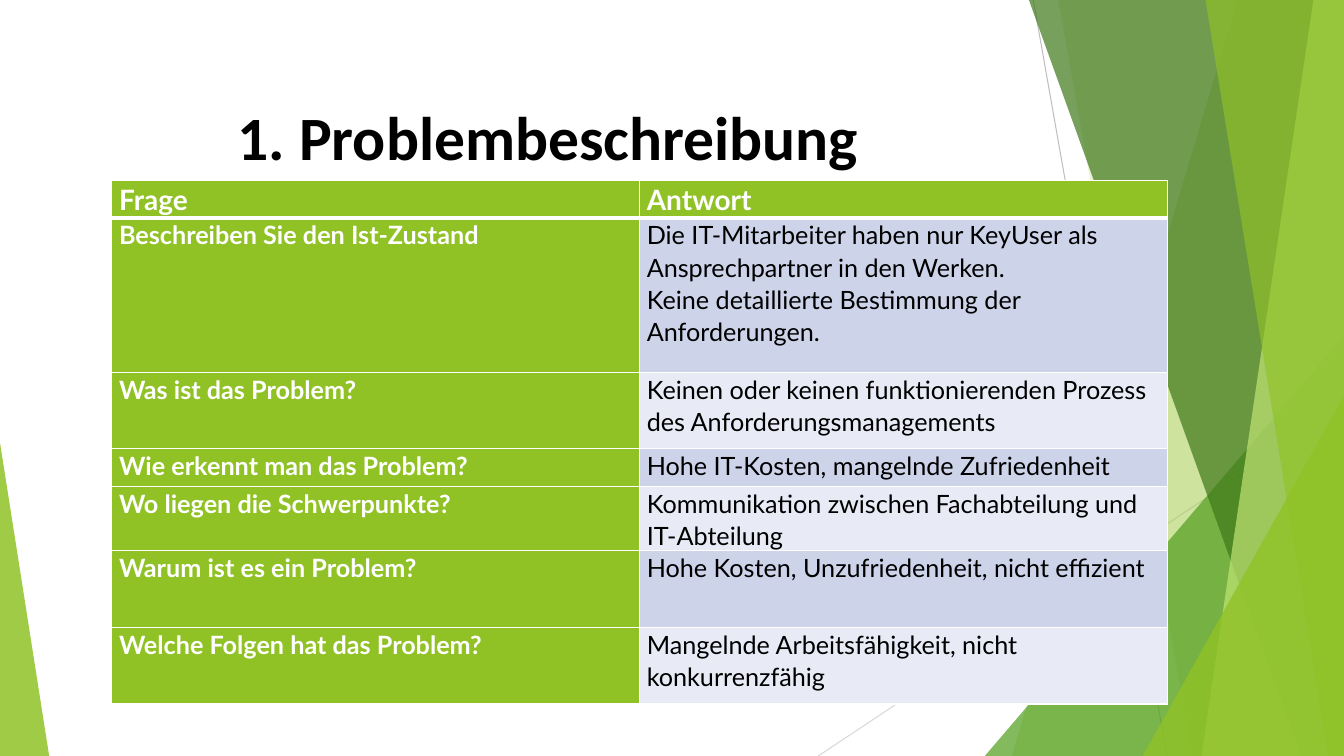
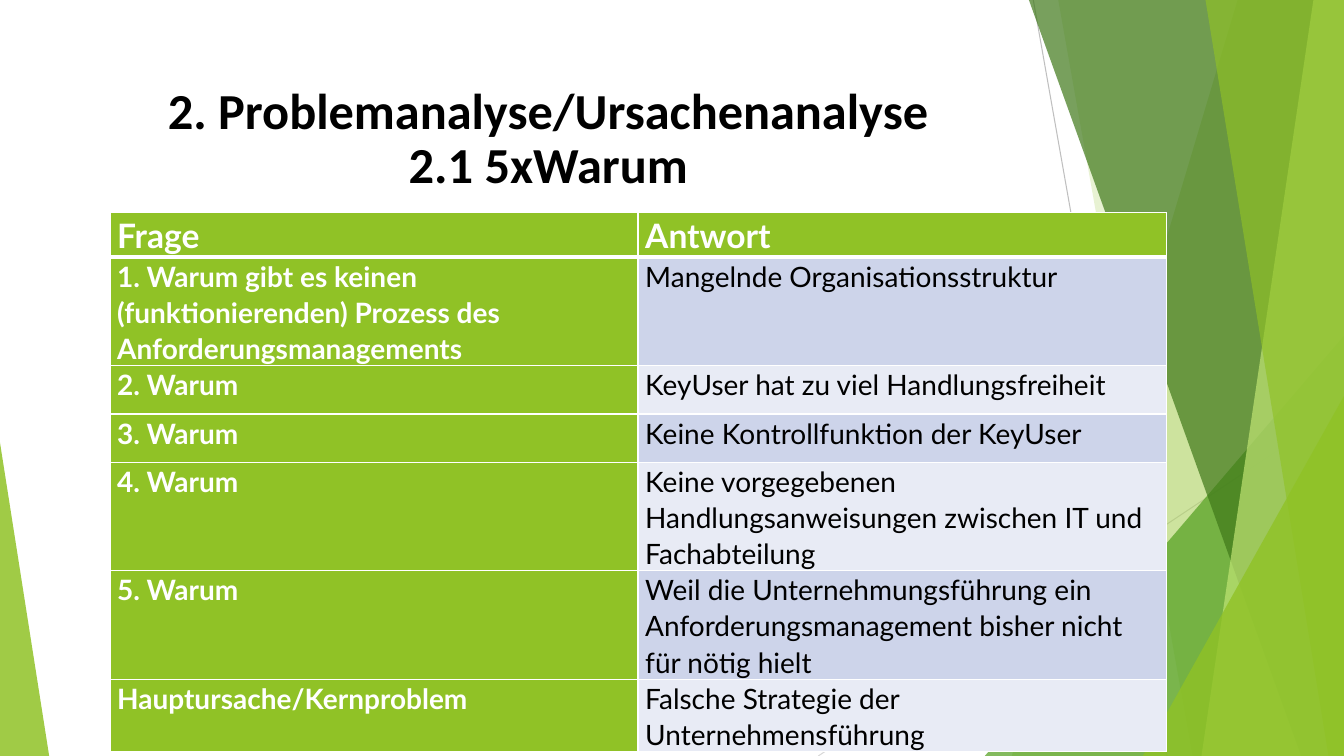
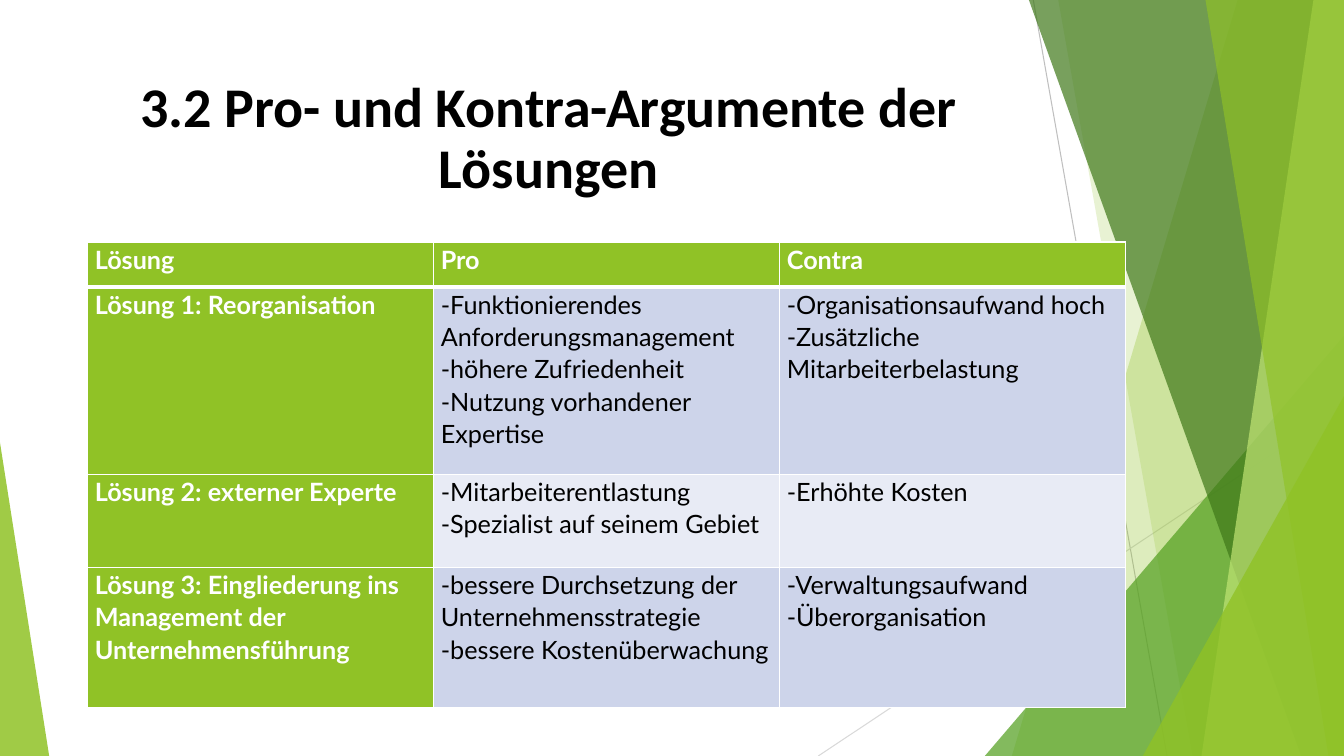
from dataclasses import dataclass

from lxml import etree
from pptx import Presentation
from pptx.dml.color import RGBColor
from pptx.enum.shapes import MSO_CONNECTOR, MSO_SHAPE
from pptx.enum.text import MSO_ANCHOR, MSO_AUTO_SIZE, PP_ALIGN
from pptx.oxml.ns import qn
from pptx.util import Cm, Pt

STRAIGHT = MSO_CONNECTOR.STRAIGHT
TRIANGLE = MSO_SHAPE.ISOSCELES_TRIANGLE
MIDDLE = MSO_ANCHOR.MIDDLE
CENTER = PP_ALIGN.CENTER
NO_AUTOFIT = MSO_AUTO_SIZE.NONE

SLIDE_WIDTH, SLIDE_HEIGHT = 33.87, 19.05
TITLE_BOX = {"left": Cm(1.88), "top": Cm(1.7), "width": Cm(23.88), "height": Cm(3.66)}
TITLE_FRAME = {"vertical_anchor": MIDDLE, "auto_size": NO_AUTOFIT, "word_wrap": True}
CELL_MARGINS = {"margin_left": Cm(0.18), "margin_right": Cm(0.18),
                "margin_top": 0, "margin_bottom": 0}
COLORS = {
    "lime": "90C226",
    "green": "54A021",
    "forest": "3F7819",
    "pale lime": "C0E474",
    "gray": "BFBFBF",
    "light gray": "D9D9D9",
    "band dark": "CDD4EA",
    "band light": "E8EBF5",
    "white": "FFFFFF",
    "black": "000000",
}


@dataclass
class Ray:
    start: tuple[float, float]
    end: tuple[float, float]
    color: str


@dataclass
class Band:
    """Full-height area from a slanted left edge to the right slide edge."""
    top_x: float
    bottom_x: float
    color: str
    opacity: int


@dataclass
class Corner:
    """Triangle standing on the lower slide edge; apex 0 is left, 1 is right."""
    left: float
    top: float
    width: float
    apex: int
    color: str
    opacity: int


@dataclass
class TableSlide:
    title: str
    title_size: int
    left: float
    top: float
    width: float
    header_size: int
    body_size: int
    row_heights: list[float]
    rows: list[tuple[str, ...]]


RAYS = [
    Ray((26.04, 0), (29.41, SLIDE_HEIGHT), "gray"),
    Ray((SLIDE_WIDTH, 10.24), (20.62, SLIDE_HEIGHT), "light gray"),
]
FACETS = [
    Band(31.19, 25.5, "lime", 30),
    Band(26.67, 30.05, "lime", 20),
    Corner(24.82, 8.46, 9.05, 1, "green", 72),
    Band(25.93, 32.79, "forest", 70),
    Band(33.1, 30.28, "pale lime", 70),
    Band(30.38, 33.48, "lime", 65),
    Corner(28.8, 9.98, 5.07, 1, "lime", 80),
    Corner(0, 11.15, 1.24, 0, "lime", 85),
]
SLIDES = [
    TableSlide(
        "1. Problembeschreibung", 44, 2.82, 4.55, 26.6, 20, 18,
        [0.94, 3.89, 1.93, 0.94, 0.94, 1.93, 1.93],
        [
            ("Frage", "Antwort"),
            ("Beschreiben Sie den Ist-Zustand",
             "Die IT-Mitarbeiter haben nur KeyUser als Ansprechpartner in den Werken.\n"
             "Keine detaillierte Bestimmung der Anforderungen."),
            ("Was ist das Problem?",
             "Keinen oder keinen funktionierenden Prozess des Anforderungsmanagements"),
            ("Wie erkennt man das Problem?", "Hohe IT-Kosten, mangelnde Zufriedenheit"),
            ("Wo liegen die Schwerpunkte?",
             "Kommunikation zwischen Fachabteilung und IT-Abteilung"),
            ("Warum ist es ein Problem?", "Hohe Kosten, Unzufriedenheit, nicht effizient"),
            ("Welche Folgen hat das Problem?",
             "Mangelnde Arbeitsfähigkeit, nicht konkurrenzfähig"),
        ],
    ),
    TableSlide(
        "2. Problemanalyse/Ursachenanalyse\v2.1 5xWarum", 36, 2.77, 5.36, 26.62, 24, 20,
        [1.12, 2.46, 1.22, 1.22, 2.46, 2.46, 1.22],
        [
            ("Frage", "Antwort"),
            ("1. Warum gibt es keinen (funktionierenden) Prozess des Anforderungsmanagements",
             "Mangelnde Organisationsstruktur"),
            ("2. Warum", "KeyUser hat zu viel Handlungsfreiheit"),
            ("3. Warum", "Keine Kontrollfunktion der KeyUser"),
            ("4. Warum",
             "Keine vorgegebenen Handlungsanweisungen zwischen IT und Fachabteilung"),
            ("5. Warum",
             "Weil die Unternehmungsführung ein Anforderungsmanagement bisher nicht "
             "für nötig hielt"),
            ("Hauptursache/Kernproblem", "Falsche Strategie der Unternehmensführung"),
        ],
    ),
    TableSlide(
        "3.2 Pro- und Kontra-Argumente der Lösungen", 40, 2.21, 6.1, 26.16, 18, 18,
        [1.14, 4.72, 2.34, 3.53],
        [
            ("Lösung", "Pro", "Contra"),
            ("Lösung 1: Reorganisation",
             "-Funktionierendes Anforderungsmanagement\v-höhere Zufriedenheit\v"
             "-Nutzung vorhandener Expertise",
             "-Organisationsaufwand hoch\v-Zusätzliche Mitarbeiterbelastung"),
            ("Lösung 2: externer Experte",
             "-Mitarbeiterentlastung\v-Spezialist auf seinem Gebiet", "-Erhöhte Kosten"),
            ("Lösung 3: Eingliederung ins Management der Unternehmensführung",
             "-bessere Durchsetzung der Unternehmensstrategie\v-bessere Kostenüberwachung",
             "-Verwaltungsaufwand\v-Überorganisation"),
        ],
    ),
]


def rgb(color: str) -> RGBColor:
    return RGBColor.from_string(COLORS[color])


def apply(target, values: dict) -> None:
    for attribute, value in values.items():
        setattr(target, attribute, value)


def format_text(frame, font: str, size: int, color: str, bold: bool, paragraph: dict) -> None:
    for line in frame.paragraphs:
        apply(line, paragraph)
        for run in line.runs:
            apply(run.font, {"name": font, "size": Pt(size), "bold": bold})
            run.font.color.rgb = rgb(color)


def draw_ray(shapes, ray: Ray):
    line = shapes.add_connector(STRAIGHT, *map(Cm, ray.start + ray.end))
    line.line.color.rgb = rgb(ray.color)
    line.line.width = Pt(0.75)
    etree.SubElement(line.element.spPr, qn("a:effectLst"))
    return line


def draw_facet(shapes, facet: Band | Corner):
    if isinstance(facet, Band):
        outline = shapes.build_freeform(Cm(facet.top_x), 0)
        corners = [(SLIDE_WIDTH, 0), (SLIDE_WIDTH, SLIDE_HEIGHT), (facet.bottom_x, SLIDE_HEIGHT)]
        outline.add_line_segments([(Cm(x), Cm(y)) for x, y in corners])
        shape = outline.convert_to_shape()
    else:
        shape = shapes.add_shape(TRIANGLE, Cm(facet.left), Cm(facet.top),
                                 Cm(facet.width), Cm(SLIDE_HEIGHT - facet.top))
        shape.adjustments[0] = facet.apex
    shape.shadow.inherit = False
    shape.line.fill.background()
    shape.fill.solid()
    shape.fill.fore_color.rgb = rgb(facet.color)
    color_node = shape.element.spPr.find(f"{qn('a:solidFill')}/{qn('a:srgbClr')}")
    etree.SubElement(color_node, qn("a:alpha"), val=str(facet.opacity * 1000))
    return shape


def decorate_layout(layout, slide) -> None:
    """Draw the background on the slide, then move it to the layout all slides share."""
    for placeholder in list(layout.placeholders)[1:]:
        layout.shapes.element.remove(placeholder.element)
    background = [draw_ray(slide.shapes, ray) for ray in RAYS]
    background += [draw_facet(slide.shapes, facet) for facet in FACETS]
    for shape in background:
        layout.shapes.element.append(shape.element)


def add_borders(cell, row: int) -> None:
    """White rules, thick between the header and the first body row."""
    widths = {"a:lnL": 1, "a:lnR": 1, "a:lnT": 3 if row == 1 else 1,
              "a:lnB": 3 if row == 0 else 1}
    properties = cell._tc.get_or_add_tcPr()
    for side, width in widths.items():
        rule = etree.SubElement(properties, qn(side), w=str(Pt(width)))
        fill = etree.SubElement(rule, qn("a:solidFill"))
        etree.SubElement(fill, qn("a:srgbClr"), val=COLORS["white"])


def add_title(slide, content: TableSlide) -> None:
    title = slide.shapes.title
    apply(title, TITLE_BOX)
    title.text_frame.text = content.title
    apply(title.text_frame, TITLE_FRAME)
    format_text(title.text_frame, "Calibri", content.title_size, "black", True,
                {"alignment": CENTER, "line_spacing": 0.9})


def add_answers(slide, content: TableSlide) -> None:
    columns = len(content.rows[0])
    table = slide.shapes.add_table(
        len(content.rows), columns, Cm(content.left), Cm(content.top),
        Cm(content.width), Cm(sum(content.row_heights))).table
    for column in table.columns:
        column.width = Cm(content.width / columns)
    for row, (height, texts) in enumerate(zip(content.row_heights, content.rows)):
        table.rows[row].height = Cm(height)
        band = "band dark" if row % 2 else "band light"
        size = content.body_size if row else content.header_size
        for column, text in enumerate(texts):
            heading = row == 0 or column == 0
            cell = table.cell(row, column)
            apply(cell, CELL_MARGINS)
            add_borders(cell, row)
            cell.fill.solid()
            cell.fill.fore_color.rgb = rgb("lime" if heading else band)
            cell.text_frame.text = text
            format_text(cell.text_frame, "Lato", size, "white" if heading else "black",
                        heading, {"line_spacing": 1.07})


def main() -> None:
    presentation = Presentation()
    apply(presentation, {"slide_width": Cm(SLIDE_WIDTH), "slide_height": Cm(SLIDE_HEIGHT)})
    layout = presentation.slide_layouts.get_by_name("Title Only")
    for number, content in enumerate(SLIDES):
        slide = presentation.slides.add_slide(layout)
        if number == 0:
            decorate_layout(layout, slide)
        add_title(slide, content)
        add_answers(slide, content)
    presentation.save("out.pptx")


if __name__ == "__main__":
    main()
